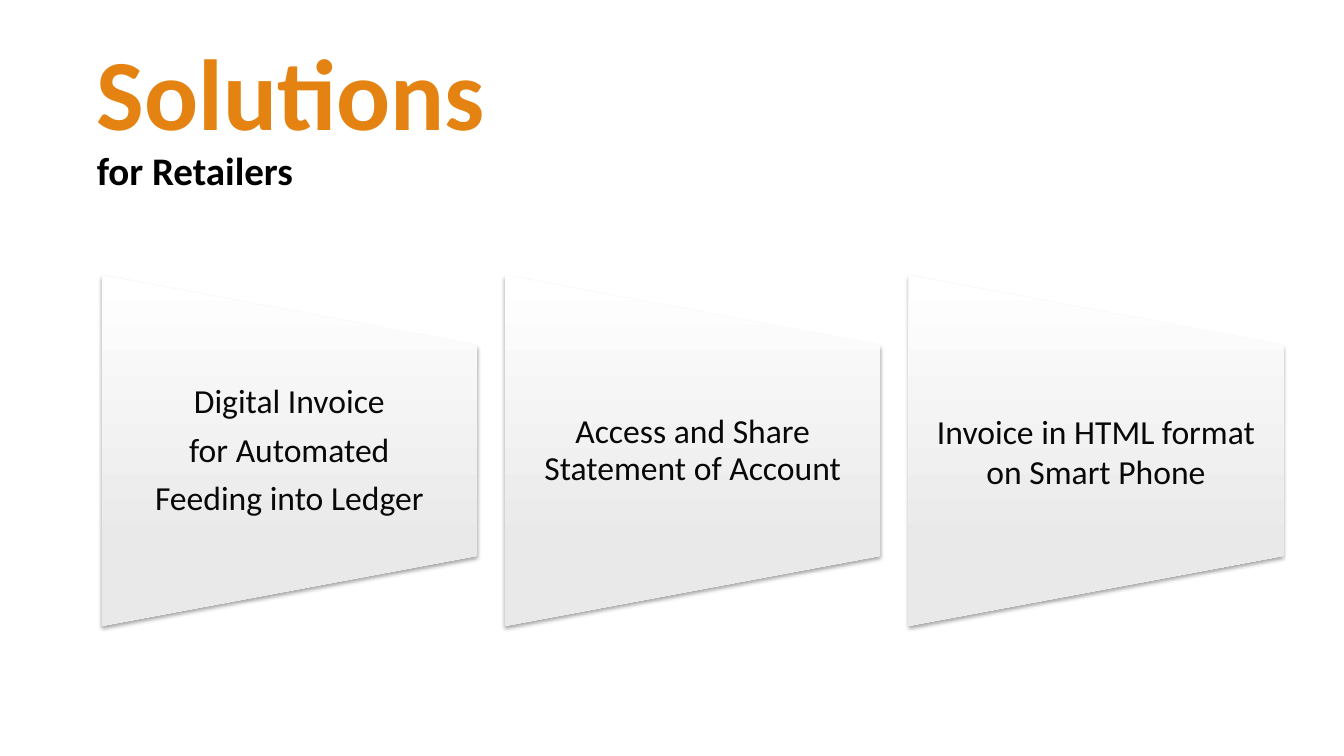
from lxml.etree import SubElement
from pptx import Presentation
from pptx.dml.color import RGBColor
from pptx.enum.shapes import MSO_SHAPE
from pptx.enum.text import MSO_ANCHOR, MSO_AUTO_SIZE, PP_ALIGN
from pptx.oxml.ns import qn
from pptx.util import Emu, Pt

PX = 9144  # 100 px to the inch
FONT = "Calibri"
PANEL_LEFT, PANEL_TOP, PANEL_PITCH = 113, 261, 400
PANEL_WIDTH, PANEL_HEIGHT = 348, 372  # before the quarter turn

# Paragraphs and line spacing of each panel
SOLUTIONS = [
    (["Digital Invoice", "for Automated", "Feeding into Ledger"], 0.9),
    (["Access and Share Statement of Account"], 0.9),
    (["Invoice in HTML format on Smart Phone"], 1.0),
]


def px(*lengths):
    return [Emu(length * PX) for length in lengths]


def color(hex_string):
    return RGBColor.from_string(hex_string)


def place(shape, *box):
    shape.left, shape.top, shape.width, shape.height = px(*box)


def add_title(slide, heading, subheading):
    title = slide.shapes.title
    place(title, 86, 21, 940, 81)
    frame = title.text_frame
    frame.word_wrap = True
    frame.auto_size = MSO_AUTO_SIZE.NONE
    frame.vertical_anchor = MSO_ANCHOR.TOP
    frame.margin_top = Emu(22 * PX)
    paragraph = frame.paragraphs[0]
    paragraph.alignment = PP_ALIGN.LEFT
    paragraph.line_spacing = 0.9
    paragraph.font.name = FONT
    paragraph.font.bold = True
    for text, size, hex_string in ((heading, 72, "E48312"),
                                   (subheading, 27.9, "000000")):
        if paragraph.runs:
            paragraph.add_line_break()
        run = paragraph.add_run()
        run.text = text
        run.font.size = Pt(size)
        run.font.color.rgb = color(hex_string)


def add_shadow(shape):
    shape.shadow.inherit = False
    effects = shape._element.spPr.find(qn("a:effectLst"))
    shadow = SubElement(effects, qn("a:outerShdw"), blurRad=str(Pt(3)),
                        dist=str(Pt(2)), dir="5400000", rotWithShape="0")
    tint = SubElement(shadow, qn("a:srgbClr"), val="000000")
    SubElement(tint, qn("a:alpha"), val="35000")


def add_panel(slide, left):
    panel = slide.shapes.add_shape(
        MSO_SHAPE.FLOWCHART_MANUAL_OPERATION,
        *px(left, PANEL_TOP, PANEL_WIDTH, PANEL_HEIGHT))
    panel.rotation = 270
    panel.line.fill.background()
    # Vertical gradient that stays upright despite the rotation
    panel.fill.gradient()
    panel.fill.gradient_angle = 270
    for stop, position, hex_string in zip(
            panel.fill.gradient_stops, (0, 0.78), ("FFFFFF", "E9E9E9")):
        stop.position = position
        stop.color.rgb = color(hex_string)
    panel._element.spPr.find(qn("a:gradFill")).set("rotWithShape", "0")
    add_shadow(panel)


def add_caption(slide, left, lines, line_spacing):
    frame = slide.shapes.add_textbox(*px(left, 343, 372, 209)).text_frame
    frame.word_wrap = True
    frame.vertical_anchor = MSO_ANCHOR.MIDDLE
    frame.margin_left = frame.margin_right = Emu(17 * PX)
    frame.margin_top = frame.margin_bottom = 0
    frame.text = "\n".join(lines)
    for paragraph in frame.paragraphs:
        paragraph.alignment = PP_ALIGN.CENTER
        paragraph.line_spacing = line_spacing
        if line_spacing < 1:
            paragraph.space_after = Pt(8.4)
        paragraph.font.name = FONT
        paragraph.font.size = Pt(24)
        paragraph.font.color.rgb = color("080808")


def main():
    presentation = Presentation()
    presentation.slide_width, presentation.slide_height = px(1333, 750)
    slide = presentation.slides.add_slide(presentation.slide_layouts[5])

    # Heading
    add_title(slide, "Solutions", "for Retailers")

    # Row of panels with centred captions
    for index, (lines, line_spacing) in enumerate(SOLUTIONS):
        left = PANEL_LEFT + index * PANEL_PITCH
        add_panel(slide, left)
        add_caption(slide, left - 12, lines, line_spacing)

    presentation.save("out.pptx")


if __name__ == "__main__":
    main()
